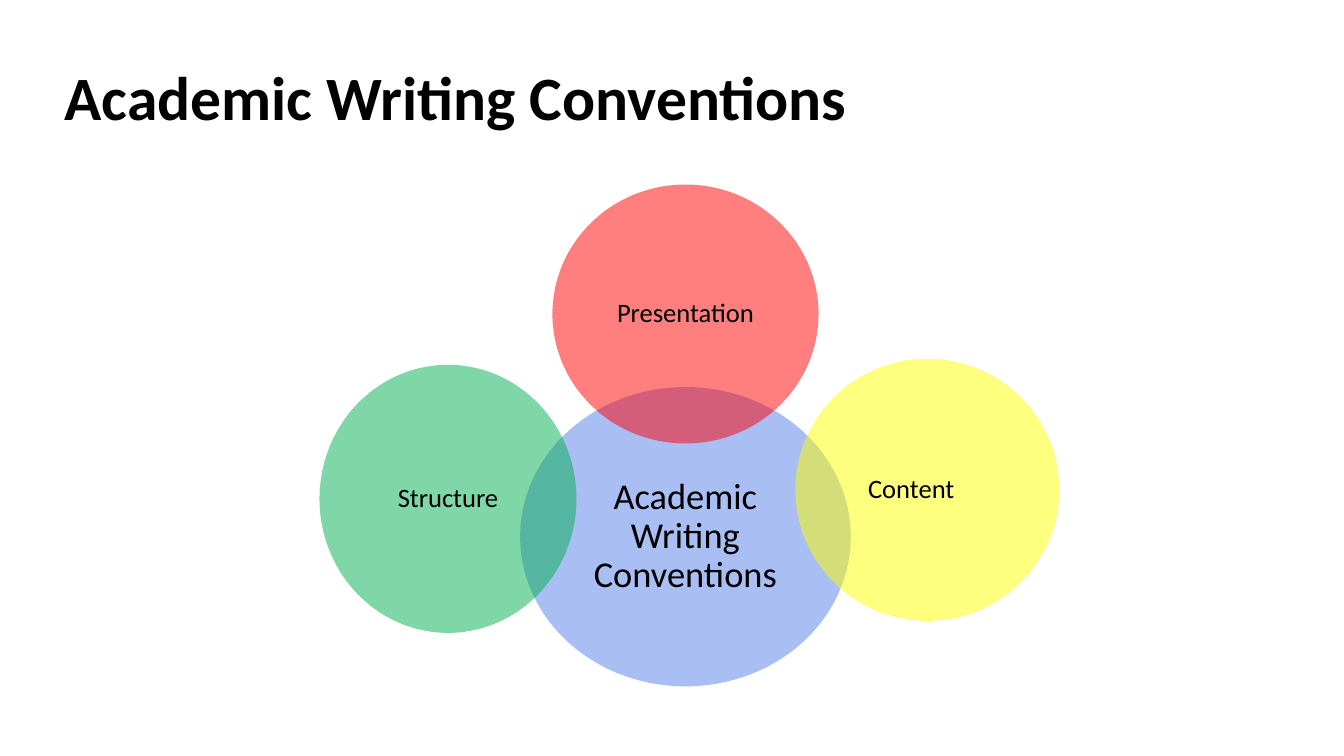
from dataclasses import dataclass

from lxml import etree
from pptx import Presentation
from pptx.dml.color import RGBColor
from pptx.enum import shapes, text
from pptx.oxml.ns import qn
from pptx.util import Pt

TITLE = "Academic Writing Conventions"
TITLE_BOX = (38.9, 27.4, 594, 88.6)

# label, (left, top, width, height), fill, type size, right inset
CIRCLES = [
    ("Academic Writing Conventions", (371.5, 276.5, 236.2, 213.8), "blue", "hub", 0),
    ("Presentation", (394.6, 131.8, 190.1, 185), "red", "satellite", 0),
    ("Content", (568.1, 256.3, 188.6, 187.2), "yellow", "satellite", 23),
    ("Structure", (228.2, 260.6, 183.6, 191.5), "green", "satellite", 0),
]


@dataclass(frozen=True)
class Theme:
    font = "Calibri"
    ink = "000000"
    fills = {"blue": "547EE8", "red": "FF0000", "yellow": "FFFF00", "green": "00B050"}
    sizes = {"title": 44, "hub": 26, "satellite": 19}
    opacity = 50
    line_spacing = 0.9


theme = Theme()


def write(shape, wording, size, alignment, bold=False):
    frame = shape.text_frame
    frame.word_wrap = True
    frame.auto_size = text.MSO_AUTO_SIZE.NONE
    frame.vertical_anchor = text.MSO_ANCHOR.MIDDLE
    paragraph = frame.paragraphs[0]
    paragraph.alignment = alignment
    paragraph.line_spacing = theme.line_spacing
    run = paragraph.add_run()
    run.text = wording
    run.font.name = theme.font
    run.font.size = Pt(theme.sizes[size])
    run.font.bold = bold
    run.font.color.rgb = RGBColor.from_string(theme.ink)


def add_title(slide):
    title = slide.shapes.title
    title.left, title.top, title.width, title.height = map(Pt, TITLE_BOX)
    write(title, TITLE, "title", text.PP_ALIGN.LEFT, bold=True)


def add_circle(slide, label, box, fill, size, right_inset):
    circle = slide.shapes.add_shape(shapes.MSO_SHAPE.OVAL, *map(Pt, box))
    circle.shadow.inherit = False
    circle.line.fill.background()
    circle.fill.solid()
    circle.fill.fore_color.rgb = RGBColor.from_string(theme.fills[fill])
    color = circle.fill._xPr.find(qn("a:solidFill"))[0]
    etree.SubElement(color, qn("a:alpha"), val=str(theme.opacity * 1000))
    frame = circle.text_frame
    frame.margin_left = frame.margin_top = frame.margin_bottom = 0
    frame.margin_right = Pt(right_inset)
    write(circle, label, size, text.PP_ALIGN.CENTER)


def main():
    """Build the slide of overlapping academic writing circles."""
    presentation = Presentation()
    presentation.slide_width, presentation.slide_height = Pt(960), Pt(540)
    slide = presentation.slides.add_slide(presentation.slide_layouts.get_by_name("Title Only"))
    add_title(slide)
    for circle in CIRCLES:
        add_circle(slide, *circle)
    presentation.save("out.pptx")


if __name__ == "__main__":
    main()
